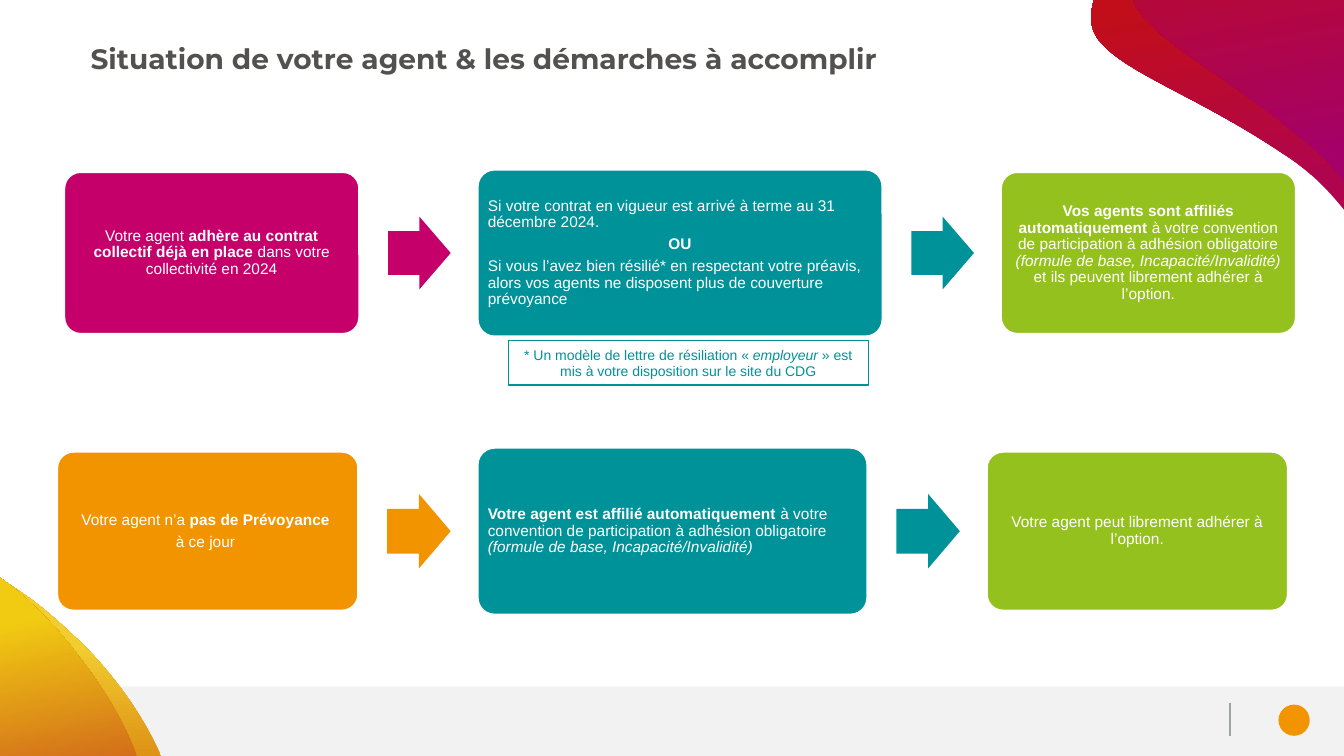
from pptx import Presentation
from pptx.dml.color import RGBColor
from pptx.enum.shapes import MSO_CONNECTOR, MSO_SHAPE
from pptx.enum.text import MSO_ANCHOR, PP_ALIGN
from pptx.oxml.ns import qn
from pptx.util import Inches, Pt
from lxml.etree import SubElement

COLORS = {
    "white": "FFFFFF", "footer": "F2F2F2", "title": "535150", "rule": "9FA3A4",
    "magenta": "C5006B", "orange": "F29400", "teal": "009299", "green": "95C11F",
}
LEFT, CENTER = PP_ALIGN.LEFT, PP_ALIGN.CENTER
BEFORE_ARROW, AFTER_ARROW = 0.29, 0.27
CURVE_STEPS = 16

CORNERS = [
    ((10.85, 0), [
        [(10.8, 0.17), (10.82, 0.3), (10.9, 0.4)],
        [(11.16, 0.73), (11.88, 0.95), (12.75, 1.54)],
        [(12.98, 1.69), (13.17, 1.88), (13.33, 2.08)],
        [(13.33, 0)],
    ], [(0.13, "AF054E"), (0.94, "C20E1A")], 260),
    ((11.24, 0), [
        [(11.25, 0.03), (11.26, 0.06), (11.28, 0.08)],
        [(11.5, 0.45), (12.19, 0.75), (12.99, 1.44)],
        [(13.12, 1.55), (13.23, 1.67), (13.33, 1.8)],
        [(13.33, 0)],
    ], [(0.13, "A50069"), (0.94, "B4083D")], 260),
    ((0, 7.5), [
        [(1.6, 7.5)],
        [(1.44, 7.15), (1.19, 6.76), (0.81, 6.38)],
        [(0.77, 6.34), (0.72, 6.3), (0.68, 6.26)],
        [(0.45, 6.04), (0.22, 5.87), (0, 5.74)],
    ], [(0, "DE9216"), (0.62, "F1CD2F")], 270),
    ((0, 7.5), [
        [(1.36, 7.5)],
        [(1.24, 7.19), (1.05, 6.85), (0.78, 6.51)],
        [(0.74, 6.46), (0.71, 6.41), (0.67, 6.37)],
        [(0.45, 6.1), (0.22, 5.89), (0, 5.73)],
    ], [(0, "D36F1A"), (0.77, "F1CB12")], 260),
]

NO_COVER_STEPS = [
    ("orange", [(CENTER, [("Votre agent n’a ", ""), ("pas de Prévoyance ", "b")]),
                (CENTER, [("à ce jour ", "")])]),
    ("teal", [(LEFT, [
        ("Votre agent est affilié automatiquement ", "b"),
        ("à votre convention de participation à adhésion obligatoire ", ""),
        ("(formule de base, Incapacité/Invalidité)", "i")])]),
    ("green", [(CENTER, [("Votre agent peut librement adhérer à l’option.", "")])]),
]

COLLECTIVE_STEPS = [
    ("magenta", [(CENTER, [
        ("Votre agent ", ""), ("adhère au contrat collectif déjà en place ", "b"),
        ("dans votre collectivité en 2024", "")])]),
    ("teal", [
        (LEFT, [("Si votre contrat en vigueur est arrivé à terme au 31 décembre 2024.", "")]),
        (CENTER, [("OU", "b")]),
        (LEFT, [("Si vous l’avez bien résilié* en respectant votre préavis, alors vos "
                 "agents ne disposent plus de couverture prévoyance", "")])]),
    ("green", [(CENTER, [
        ("Vos agents sont affiliés automatiquement ", "b"),
        ("à votre convention de participation à adhésion obligatoire ", ""),
        ("(formule de base, Incapacité/Invalidité) ", "i"),
        ("et ils peuvent librement adhérer à l’option.", "")])]),
]

NOTE = [(CENTER, [
    ("* Un modèle de lettre de résiliation « ", ""), ("employeur ", "i"),
    ("» est mis à votre disposition sur le site du CDG", "")])]


def rgb(name):
    return RGBColor.from_string(COLORS[name])


def add_block(slide, kind, left, top, width, height, fill=None, line=None, line_width=1):
    shape = slide.shapes.add_shape(
        kind, Inches(left), Inches(top), Inches(width), Inches(height))
    shape.shadow.inherit = False
    if fill:
        shape.fill.solid()
        shape.fill.fore_color.rgb = rgb(fill)
    else:
        shape.fill.background()
    if line:
        shape.line.color.rgb = rgb(line)
        shape.line.width = Pt(line_width)
    else:
        shape.line.fill.background()
    return shape


def write_text(shape, paragraphs, size, color, font="Arial"):
    frame = shape.text_frame
    frame.word_wrap = True
    for index, (alignment, runs) in enumerate(paragraphs):
        paragraph = frame.add_paragraph() if index else frame.paragraphs[0]
        paragraph.alignment = alignment
        for text, style in runs:
            run = paragraph.add_run()
            run.text = text
            run.font.name = font
            run.font.size = Pt(size)
            run.font.color.rgb = rgb(color)
            run.font.bold = style == "b"
            run.font.italic = style == "i"
    return frame


def add_step(slide, left, middle, width, height, color, paragraphs):
    shape = add_block(slide, MSO_SHAPE.ROUNDED_RECTANGLE, left, middle - height / 2,
                      width, height, color, "white")
    shape.adjustments[0] = 0.1
    frame = write_text(shape, paragraphs, 11, "white")
    frame.vertical_anchor = MSO_ANCHOR.MIDDLE
    frame.margin_left = frame.margin_right = Inches(0.05)
    frame.margin_top = frame.margin_bottom = Inches(0.05)
    for paragraph in frame.paragraphs:
        paragraph.line_spacing = 0.9
        paragraph.space_after = Pt(3.85)


def add_row(slide, left, middle, side_size, center_size, arrow_size, steps):
    sizes = [side_size, center_size, side_size]
    arrow_width, arrow_height = arrow_size
    for index, ((width, height), (color, paragraphs)) in enumerate(zip(sizes, steps)):
        add_step(slide, left, middle, width, height, color, paragraphs)
        left += width + BEFORE_ARROW
        if index < len(steps) - 1:
            arrow = add_block(slide, MSO_SHAPE.RIGHT_ARROW, left,
                              middle - arrow_height / 2, arrow_width, arrow_height, color)
            arrow.adjustments[0] = 0.6
            arrow.adjustments[1] = 0.5
            left += arrow_width + AFTER_ARROW


def curve_points(start, controls):
    for step in range(1, CURVE_STEPS + 1):
        t = step / CURVE_STEPS
        weights = ((1 - t) ** 3, 3 * t * (1 - t) ** 2, 3 * t ** 2 * (1 - t), t ** 3)
        points = (start, *controls)
        yield tuple(sum(w * point[axis] for w, point in zip(weights, points))
                    for axis in (0, 1))


def add_corner(slide, start, segments, stops, angle):
    outline = [start]
    for segment in segments:
        outline.extend(segment if len(segment) == 1 else curve_points(outline[-1], segment))
    points = [(Inches(x), Inches(y)) for x, y in outline]
    builder = slide.shapes.build_freeform(*points[0])
    builder.add_line_segments(points[1:], close=True)
    shape = builder.convert_to_shape()
    shape.shadow.inherit = False
    shape.line.fill.background()
    shape.fill.gradient()
    shape.fill.gradient_angle = 360 - angle
    for stop, (position, color) in zip(shape.fill.gradient_stops, stops):
        stop.position = position
        stop.color.rgb = RGBColor.from_string(color)


def add_footer(slide):
    add_block(slide, MSO_SHAPE.RECTANGLE, 0, 6.81, 13.33, 0.69, "footer")
    add_block(slide, MSO_SHAPE.OVAL, 12.68, 6.99, 0.31, 0.31, "orange")
    rule = slide.shapes.add_connector(
        MSO_CONNECTOR.STRAIGHT, Inches(12.2), Inches(6.97), Inches(12.2), Inches(7.3))
    rule.line.color.rgb = rgb("rule")
    rule.line.width = Pt(1)
    SubElement(rule._element.spPr, qn("a:effectLst"))


def add_title(slide, text):
    box = slide.shapes.add_textbox(Inches(0.8), Inches(0.36), Inches(9.88), Inches(0.95))
    write_text(box, [(LEFT, [(text, "b")])], 20, "title", "Montserrat")


def main():
    presentation = Presentation()
    presentation.slide_width = Inches(13.33)
    presentation.slide_height = Inches(7.5)
    slide = presentation.slides.add_slide(presentation.slide_layouts[6])
    add_footer(slide)
    for corner in CORNERS:
        add_corner(slide, *corner)
    add_title(slide, "Situation de votre agent & les démarches à accomplir")
    add_row(slide, 0.57, 5.27, (2.98, 1.57), (3.86, 1.65), (0.63, 0.74), NO_COVER_STEPS)
    add_row(slide, 0.64, 2.51, (2.92, 1.6), (4.01, 1.65), (0.62, 0.72), COLLECTIVE_STEPS)
    note = add_block(slide, MSO_SHAPE.RECTANGLE, 5.04, 3.38, 3.57, 0.44,
                     line="teal", line_width=0.75)
    write_text(note, NOTE, 10, "teal")
    presentation.save("out.pptx")


if __name__ == "__main__":
    main()
